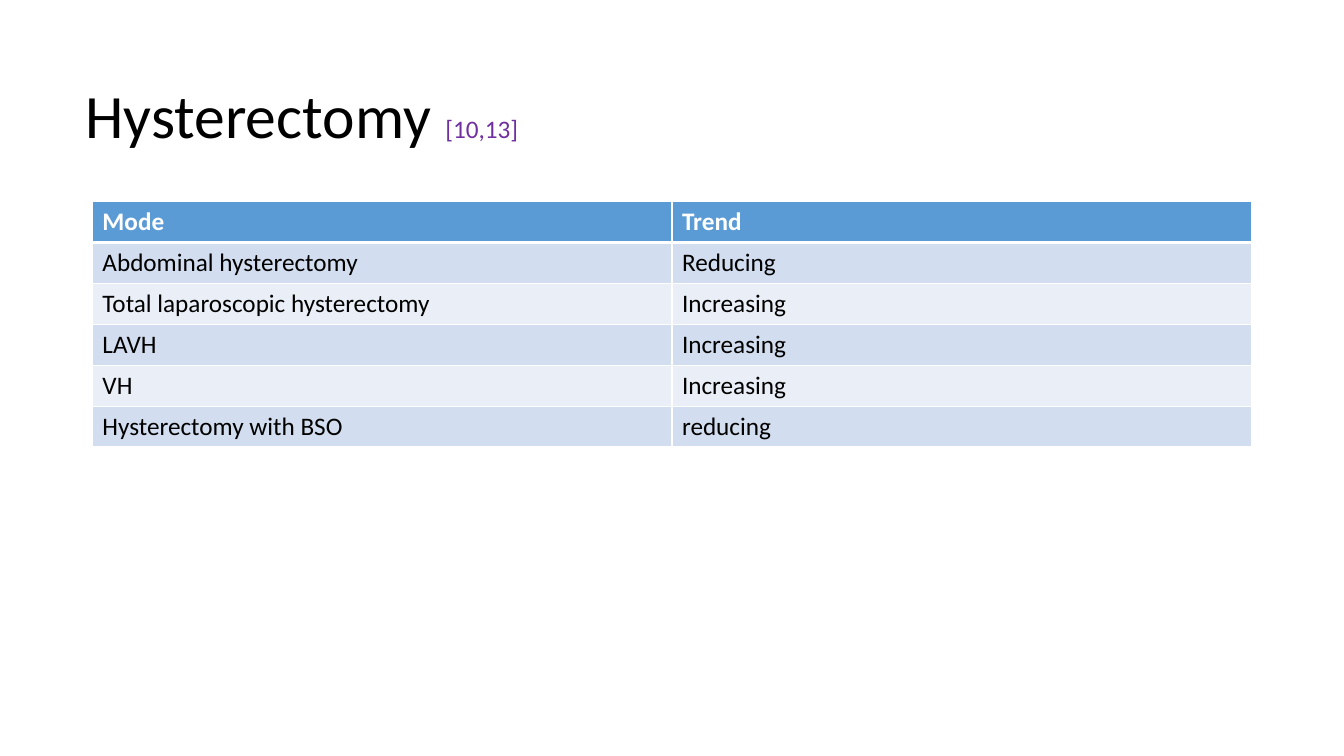
from lxml import etree
from pptx import Presentation, util as u
from pptx.dml.color import RGBColor
from pptx.enum import text
from pptx.oxml.ns import qn

PX = 9525
COLORS = {"title": "000000", "cite": "7030A0", "head": "5B9BD5", "head_text": "FFFFFF",
          "odd": "D2DEEF", "even": "EAEFF7", "body_text": "000000", "border": "FFFFFF"}
ROWS = [("Mode", "Trend"),
        ("Abdominal hysterectomy", "Reducing"),
        ("Total laparoscopic hysterectomy", "Increasing"),
        ("LAVH", "Increasing"),
        ("VH", "Increasing"),
        ("Hysterectomy with BSO", "reducing")]
COL_W, ROW_H = 552, 39


def add_run(p, words, size, color, bold=False):
    r = p.add_run()
    r.text = words
    r.font.name = "Calibri"
    r.font.size = u.Pt(size)
    r.font.bold = bold
    r.font.color.rgb = RGBColor.from_string(COLORS[color])


def add_border(cell, index, side, points):
    ln = etree.Element(qn("a:" + side), w=str(u.Pt(points)))
    fill = etree.SubElement(ln, qn("a:solidFill"))
    etree.SubElement(fill, qn("a:srgbClr"), val=COLORS["border"])
    cell._tc.get_or_add_tcPr().insert(index, ln)


prs = Presentation()
prs.slide_width, prs.slide_height = 1280 * PX, 720 * PX
s = prs.slides.add_slide(prs.slide_layouts[6])

sp = s.shapes.add_textbox(72 * PX, 72 * PX, 1092 * PX, 81 * PX)
tf = sp.text_frame
tf.word_wrap = True
tf.vertical_anchor = text.MSO_ANCHOR.MIDDLE
p = tf.paragraphs[0]
p.line_spacing = 0.9
add_run(p, "Hysterectomy ", 44, "title")
add_run(p, "[10,13]", 18, "cite")

table = s.shapes.add_table(len(ROWS), 2, 88 * PX, 192 * PX,
                           2 * COL_W * PX, len(ROWS) * ROW_H * PX).table
for i, row in enumerate(ROWS):
    head = i == 0
    band = "head" if head else "odd" if i % 2 else "even"
    for j, words in enumerate(row):
        cell = table.cell(i, j)
        cell.fill.solid()
        cell.fill.fore_color.rgb = RGBColor.from_string(COLORS[band])
        add_run(cell.text_frame.paragraphs[0], words, 18,
                "head_text" if head else "body_text", head)
        widths = {"lnL": 1, "lnR": 1, "lnT": 3 if i == 1 else 1, "lnB": 3 if head else 1}
        for k, (side, points) in enumerate(widths.items()):
            add_border(cell, k, side, points)

prs.save("out.pptx")
